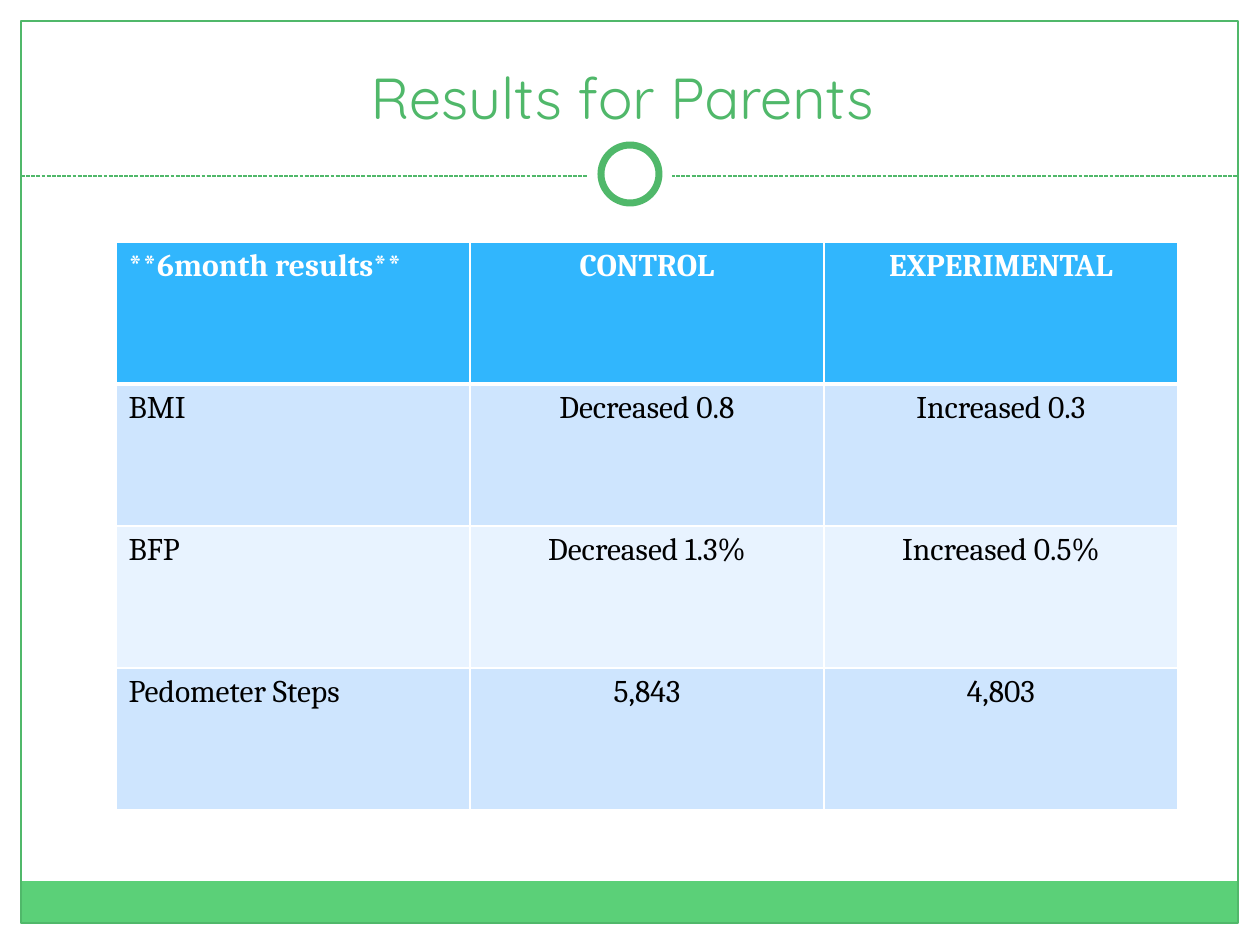
from dataclasses import dataclass

from lxml import etree
from pptx import Presentation
from pptx.dml.color import RGBColor
from pptx.enum.dml import MSO_LINE
from pptx.enum.shapes import MSO_CONNECTOR, MSO_SHAPE
from pptx.enum.text import MSO_ANCHOR, MSO_AUTO_SIZE, PP_ALIGN
from pptx.oxml.ns import qn
from pptx.util import Pt

EMU_PER_PX = 914400 / 126
RECTANGLE, OVAL = MSO_SHAPE.RECTANGLE, MSO_SHAPE.OVAL
STRAIGHT = MSO_CONNECTOR.STRAIGHT
DASHED = MSO_LINE.SQUARE_DOT
LEFT, CENTER = PP_ALIGN.LEFT, PP_ALIGN.CENTER
BOTTOM = MSO_ANCHOR.BOTTOM
NO_AUTOFIT = MSO_AUTO_SIZE.NONE


@dataclass(frozen=True)
class Theme:
    white: str = "FFFFFF"
    black: str = "000000"
    green: str = "50B86A"
    footer: str = "5BD078"
    header: str = "31B6FD"
    bands: tuple = ("CEE5FE", "E8F3FF")
    title_font: str = "Quicksand"
    body_font: str = "Cambria"
    title_size: int = 33
    body_size: int = 18
    thin: float = 0.75
    ring: float = 4
    cell_border: int = 1
    header_border: int = 3


def px(length):
    return round(length * EMU_PER_PX)


def rgb(color):
    return RGBColor.from_string(color)


class SlideBuilder:
    def __init__(self, slide, theme):
        self.slide = slide
        self.theme = theme

    def add_text(self, paragraph, text, font, size, color, align, bold=False):
        paragraph.alignment = align
        run = paragraph.add_run()
        run.text = text
        run.font.name = font
        run.font.size = Pt(size)
        run.font.bold = bold
        run.font.color.rgb = rgb(color)

    def title(self, text, left, top, width, height):
        shape = self.slide.shapes.title
        shape.left, shape.top = px(left), px(top)
        shape.width, shape.height = px(width), px(height)
        frame = shape.text_frame
        frame.auto_size = NO_AUTOFIT
        frame.vertical_anchor = BOTTOM
        self.add_text(frame.paragraphs[0], text, self.theme.title_font,
                      self.theme.title_size, self.theme.green, CENTER)

    def shape(self, kind, left, top, width, height, fill=None, line=None, weight=1):
        shape = self.slide.shapes.add_shape(
            kind, px(left), px(top), px(width), px(height))
        shape.shadow.inherit = False
        if fill:
            shape.fill.solid()
            shape.fill.fore_color.rgb = rgb(fill)
        else:
            shape.fill.background()
        if line:
            shape.line.color.rgb = rgb(line)
            shape.line.width = Pt(weight)
        else:
            shape.line.fill.background()

    def dashed_rule(self, left, right, y):
        connector = self.slide.shapes.add_connector(
            STRAIGHT, px(left), px(y), px(right), px(y))
        connector.line.color.rgb = rgb(self.theme.green)
        connector.line.width = Pt(self.theme.thin)
        connector.line.dash_style = DASHED
        etree.SubElement(connector._element.spPr, qn("a:effectLst"))

    def borders(self, cell, bottom):
        """Give a cell white edges; they must precede its fill in the XML."""
        properties = cell._tc.get_or_add_tcPr()
        thin = self.theme.cell_border
        edges = (("lnL", thin), ("lnR", thin), ("lnT", thin), ("lnB", bottom))
        for position, (tag, width) in enumerate(edges):
            edge = etree.Element(qn(f"a:{tag}"), w=str(Pt(width)))
            fill = etree.SubElement(edge, qn("a:solidFill"))
            etree.SubElement(fill, qn("a:srgbClr"), val=self.theme.white)
            properties.insert(position, edge)

    def table(self, rows, left, top, column_width, row_height):
        theme = self.theme
        column_count = len(rows[0])
        table = self.slide.shapes.add_table(
            len(rows), column_count, px(left), px(top),
            px(column_width * column_count), px(row_height * len(rows))).table
        for column in table.columns:
            column.width = px(column_width)
        for row_index, texts in enumerate(rows):
            table.rows[row_index].height = px(row_height)
            is_header = row_index == 0
            fill = theme.header if is_header else theme.bands[(row_index - 1) % 2]
            color = theme.white if is_header else theme.black
            bottom = theme.header_border if is_header else theme.cell_border
            for column_index, text in enumerate(texts):
                cell = table.cell(row_index, column_index)
                cell.fill.solid()
                cell.fill.fore_color.rgb = rgb(fill)
                self.borders(cell, bottom)
                self.add_text(cell.text_frame.paragraphs[0], text, theme.body_font,
                              theme.body_size, color,
                              CENTER if column_index else LEFT, is_header)


def main():
    presentation = Presentation()
    presentation.slide_width, presentation.slide_height = px(1260), px(945)
    title_only = presentation.slide_layouts[5]
    theme = Theme()
    builder = SlideBuilder(presentation.slides.add_slide(title_only), theme)

    builder.shape(RECTANGLE, 21, 881, 1217, 43, fill=theme.footer)
    builder.shape(RECTANGLE, 21, 21, 1217, 902, line=theme.green, weight=theme.thin)
    builder.dashed_rule(21, 1238, 176)
    builder.shape(OVAL, 588, 132, 84, 84, fill=theme.white)
    builder.shape(OVAL, 601, 145, 58, 58, theme.white, theme.green, theme.ring)
    builder.title("Results for Parents ", 42, 32, 1176, 105)
    builder.table([
        ("**6month results**", "CONTROL", "EXPERIMENTAL"),
        ("BMI", "Decreased 0.8", "Increased 0.3"),
        ("BFP", "Decreased 1.3%", "Increased 0.5%"),
        ("Pedometer Steps", "5,843", "4,803"),
    ], left=116, top=242, column_width=354, row_height=142)
    presentation.save("out.pptx")


if __name__ == "__main__":
    main()
